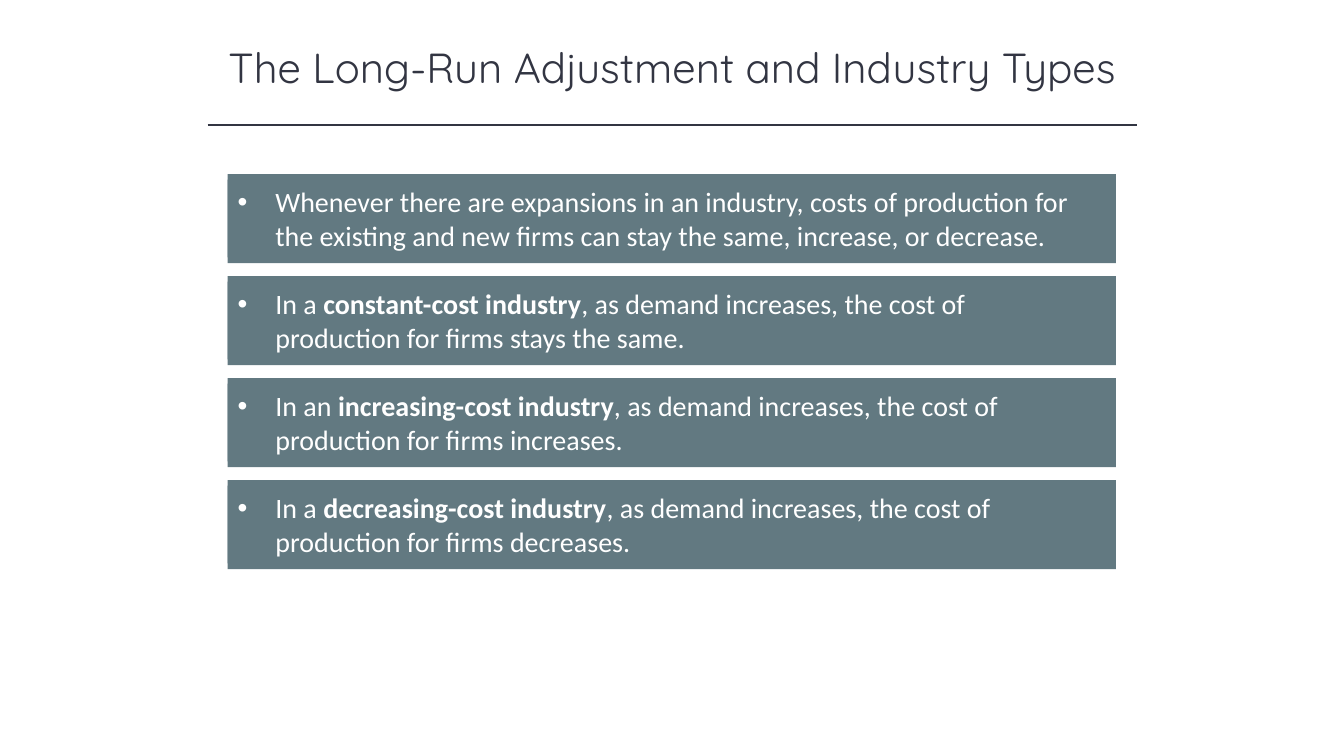
from lxml.etree import SubElement
from pptx import Presentation
from pptx.dml.color import RGBColor
from pptx.enum.shapes import MSO_CONNECTOR, MSO_SHAPE
from pptx.enum.text import MSO_ANCHOR, MSO_AUTO_SIZE, PP_ALIGN
from pptx.oxml.ns import qn
from pptx.util import Cm, Pt

COLORS = {"ink": "323542", "slate": "627981", "white": "FFFFFF"}
LEFT, TOP, WIDTH, HEIGHT, PITCH = 5.74, 4.39, 22.38, 2.24, 2.57
INSET = 0.14
INDENT = Cm(0.95)

POINTS = [
    [("Whenever there are expansions in an industry, costs of production for "
      "the existing and new firms can stay the same, increase, or decrease.", False)],
] + [
    [(f"In {word} ", False), (f"{kind}-cost industry", True),
     (f", as demand increases, the cost of production for firms {trend}.", False)]
    for word, kind, trend in [
        ("a", "constant", "stays the same"),
        ("an", "increasing", "increases"),
        ("a", "decreasing", "decreases"),
    ]
]


def color(name):
    return RGBColor.from_string(COLORS[name])


def style(font, face, size, name):
    font.name = face
    font.size = Pt(size)
    font.color.rgb = color(name)


def fit(frame):
    frame.word_wrap = True
    frame.auto_size = MSO_AUTO_SIZE.SHAPE_TO_FIT_TEXT
    frame.vertical_anchor = MSO_ANCHOR.TOP


def add_title(slide, text):
    title = slide.shapes.title
    title.left, title.top = Cm(4.24), Cm(0.91)
    title.width, title.height = Cm(25.4), Cm(1.55)
    fit(title.text_frame)
    para = title.text_frame.paragraphs[0]
    para.text = text
    para.alignment = PP_ALIGN.CENTER
    style(para.font, "Quicksand", 30, "ink")


def add_rule(slide):
    rule = slide.shapes.add_connector(
        MSO_CONNECTOR.STRAIGHT, Cm(5.23), Cm(3.15), Cm(28.65), Cm(3.15))
    rule.line.color.rgb = color("ink")
    rule.line.width = Pt(1)
    SubElement(rule._element.spPr, qn("a:effectLst"))


def add_box(group, top, width, height):
    box = group.shapes.add_shape(
        MSO_SHAPE.RECTANGLE, Cm(LEFT), Cm(top), Cm(width), Cm(height))
    box.shadow.inherit = False
    box.fill.solid()
    box.fill.fore_color.rgb = color("slate")
    box.line.fill.background()
    return box


def add_bullet(para):
    props = para._p.get_or_add_pPr()
    props.set("marL", str(INDENT))
    props.set("indent", str(-INDENT))
    SubElement(props, qn("a:buFont"), typeface="Arial")
    SubElement(props, qn("a:buChar"), char="•")


def add_point(slide, top, parts):
    group = slide.shapes.add_group_shape()
    add_box(group, top, WIDTH, HEIGHT)
    label = add_box(group, top + INSET, 21.69, HEIGHT - 2 * INSET)
    fit(label.text_frame)
    para = label.text_frame.paragraphs[0]
    para.alignment = PP_ALIGN.LEFT
    style(para.font, "Calibri", 20, "white")
    add_bullet(para)
    for text, bold in parts:
        run = para.add_run()
        run.text = text
        if bold:
            run.font.bold = True


def main():
    deck = Presentation()
    deck.slide_width, deck.slide_height = Cm(33.87), Cm(19.05)
    slide = deck.slides.add_slide(deck.slide_layouts[5])
    add_title(slide, "The Long-Run Adjustment and Industry Types")
    add_rule(slide)
    for row, parts in enumerate(POINTS):
        add_point(slide, TOP + row * PITCH, parts)
    deck.save("out.pptx")


if __name__ == "__main__":
    main()
